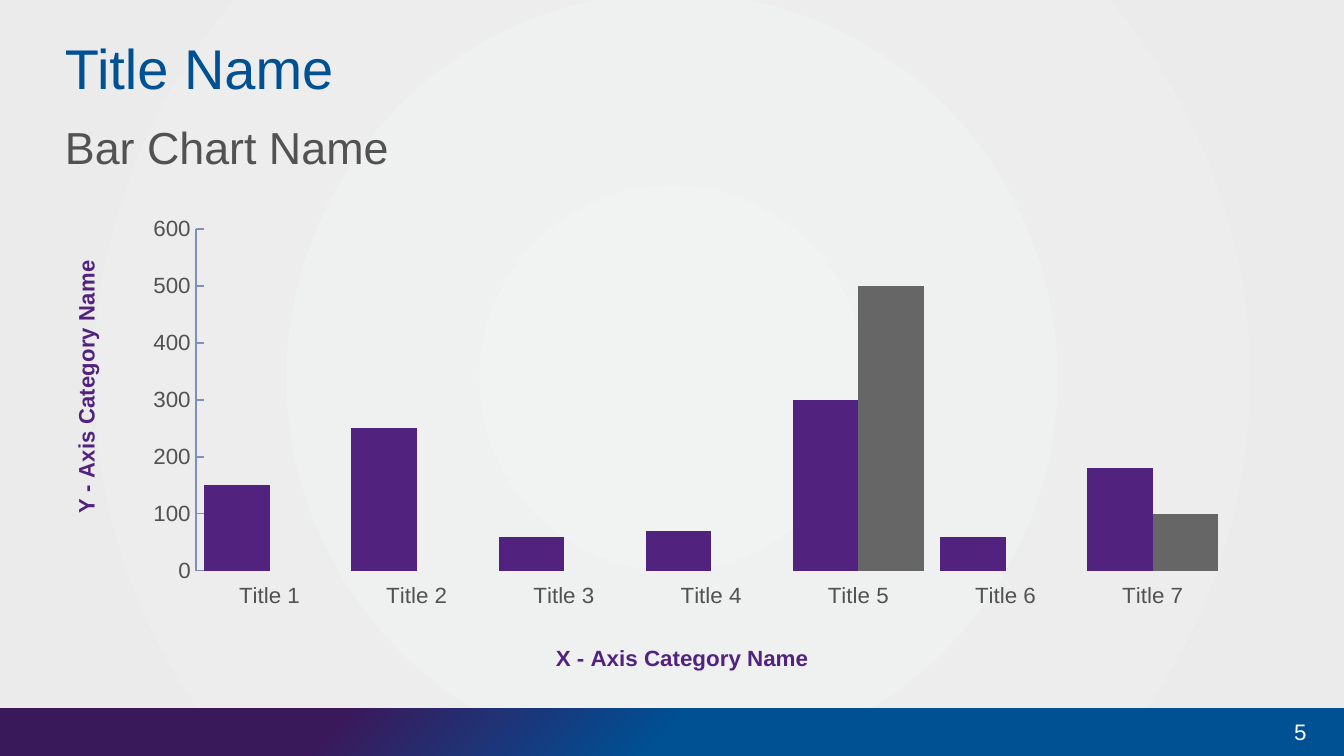
"""Build a title slide with a clustered column chart and a gradient footer."""
from lxml import etree
from pptx import Presentation
from pptx.chart.data import CategoryChartData
from pptx.dml.color import RGBColor
from pptx.enum.chart import XL_CHART_TYPE as ChartType, XL_TICK_MARK as TickMark
from pptx.enum.shapes import MSO_SHAPE as Shape
from pptx.enum.text import MSO_ANCHOR as Anchor, PP_ALIGN as Align
from pptx.oxml.ns import qn
from pptx.util import Pt

WIDTH, HEIGHT = 720, 405
FOOTER_TOP = 379.5
FOOTER_HEIGHT = HEIGHT - FOOTER_TOP
FONT = "Arial"
BLUE, PURPLE, GRAY, WHITE = "005094", "51237F", "525252", "FFFFFF"

TEXTS = [
    dict(text="Title Name", box=(34.8, 17.5, 657.4, 40.3), size=30, color=BLUE,
         margins=(0, 0, 0, 3.6), anchor=Anchor.MIDDLE, align=Align.LEFT),
    dict(text="Bar Chart Name", box=(34.8, 64, 657.4, 31), size=24, color=GRAY,
         margins=(0, 0, 0, 3.6), anchor=Anchor.TOP, align=Align.LEFT),
    dict(text="5", box=(666.7, 379, 40.3, FOOTER_HEIGHT), size=12, color=WHITE,
         margins=(7.2, 3.6, 7.2, 3.6), anchor=Anchor.MIDDLE, align=Align.RIGHT),
]
BACKGROUND_STOPS = [(0, "F1F2F2"), (100, "EBEBEC")]
FOOTER_STOPS = [(0, BLUE), (50, BLUE), (75, "3A195B")]

CHART_BOX = (28.8, 100.8, 657.4, 262)
PLOT_BOX = dict(x=76.2, y=22.3, w=552, h=186.2)
CATEGORIES = [f"Title {number}" for number in range(1, 8)]
SERIES = [
    ("Series 1", PURPLE, [150, 250, 60, 70, 300, 60, 180]),
    ("Series 2", "666666", [None, None, None, None, 500, None, 100]),
]
X_TITLE = ("X - Axis Category Name", dict(x=266.8, y=246.4))
Y_TITLE = ("Y - Axis Category Name", dict(x=7.8, y=39.5))


def rgb(color):
    return RGBColor.from_string(color)


def points(values):
    return [Pt(value) for value in values]


def set_font(font, size, color, bold=False):
    font.name, font.size, font.bold = FONT, Pt(size), bold
    font.color.rgb = rgb(color)


def radial_gradient(fill, element, stops, focus):
    fill.gradient()
    gradient = element.find(".//" + qn("a:gradFill"))
    for child in list(gradient):
        gradient.remove(child)
    stop_list = etree.SubElement(gradient, qn("a:gsLst"))
    for position, color in stops:
        stop = etree.SubElement(stop_list, qn("a:gs"), pos=str(position * 1000))
        etree.SubElement(stop, qn("a:srgbClr"), val=color)
    circle = etree.SubElement(gradient, qn("a:path"), path="circle")
    edges = {side: str(value * 1000) for side, value in zip("ltrb", focus)}
    etree.SubElement(circle, qn("a:fillToRect"), **edges)


def set_layout(element, position, inner=False):
    for old in element.findall(qn("c:layout")):
        element.remove(old)
    layout = etree.Element(qn("c:layout"))
    manual = etree.SubElement(layout, qn("c:manualLayout"))
    if inner:
        etree.SubElement(manual, qn("c:layoutTarget"), val="inner")
    for mode in ("xMode", "yMode"):
        etree.SubElement(manual, qn("c:" + mode), val="edge")
    chart_width, chart_height = CHART_BOX[2:]
    for key, value in position.items():
        share = value / (chart_width if key in "xw" else chart_height)
        etree.SubElement(manual, qn("c:" + key), val=f"{share:.4f}")
    element.insert(0 if inner else 1, layout)


def add_text(slide, text, box, size, color, margins, anchor, align):
    frame = slide.shapes.add_textbox(*points(box)).text_frame
    frame.word_wrap = True
    frame.vertical_anchor = anchor
    (frame.margin_left, frame.margin_top,
     frame.margin_right, frame.margin_bottom) = points(margins)
    paragraph = frame.paragraphs[0]
    paragraph.text, paragraph.alignment = text, align
    set_font(paragraph.font, size, color)


def add_footer(slide):
    footer = slide.shapes.add_shape(
        Shape.RECTANGLE, *points((0, FOOTER_TOP, WIDTH, FOOTER_HEIGHT)))
    footer.shadow.inherit = False
    footer.line.fill.background()
    radial_gradient(footer.fill, footer.element, FOOTER_STOPS, (100, 100, 0, 0))


def style_axis(axis, title, tick):
    text, position = title
    axis.has_major_gridlines = False
    axis.major_tick_mark, axis.minor_tick_mark = tick, TickMark.NONE
    paragraph = axis.axis_title.text_frame.paragraphs[0]
    paragraph.text = text
    set_font(paragraph.font, 12, PURPLE, bold=True)
    set_layout(axis.axis_title.element, position)


def add_column_chart(slide):
    data = CategoryChartData()
    data.categories = CATEGORIES
    for name, color, values in SERIES:
        data.add_series(name, values)
    chart = slide.shapes.add_chart(
        ChartType.COLUMN_CLUSTERED, *points(CHART_BOX), data).chart
    chart.has_legend = chart.has_title = False
    set_font(chart.font, 12, GRAY)

    plot = chart.plots[0]
    plot.gap_width, plot.overlap, plot.vary_by_categories = 25, 0, False
    for series, (name, color, values) in zip(plot.series, SERIES):
        series.format.fill.solid()
        series.format.fill.fore_color.rgb = rgb(color)
        series.invert_if_negative = False

    style_axis(chart.category_axis, X_TITLE, TickMark.OUTSIDE)
    chart.category_axis.format.line.fill.background()
    value_axis = chart.value_axis
    style_axis(value_axis, Y_TITLE, TickMark.INSIDE)
    value_axis.minimum_scale, value_axis.maximum_scale = 0, 600
    value_axis.major_unit = 100
    value_axis.format.line.color.rgb = rgb("7F8FB9")
    value_axis.format.line.width = Pt(0.75)
    set_layout(chart.element.find(".//" + qn("c:plotArea")), PLOT_BOX, inner=True)


def main():
    presentation = Presentation()
    presentation.slide_width, presentation.slide_height = points((WIDTH, HEIGHT))
    slide = presentation.slides.add_slide(presentation.slide_layouts[6])
    radial_gradient(slide.background.fill, slide.element, BACKGROUND_STOPS, (50,) * 4)
    add_footer(slide)
    add_column_chart(slide)
    for text in TEXTS:
        add_text(slide, **text)
    presentation.save("out.pptx")


if __name__ == "__main__":
    main()
